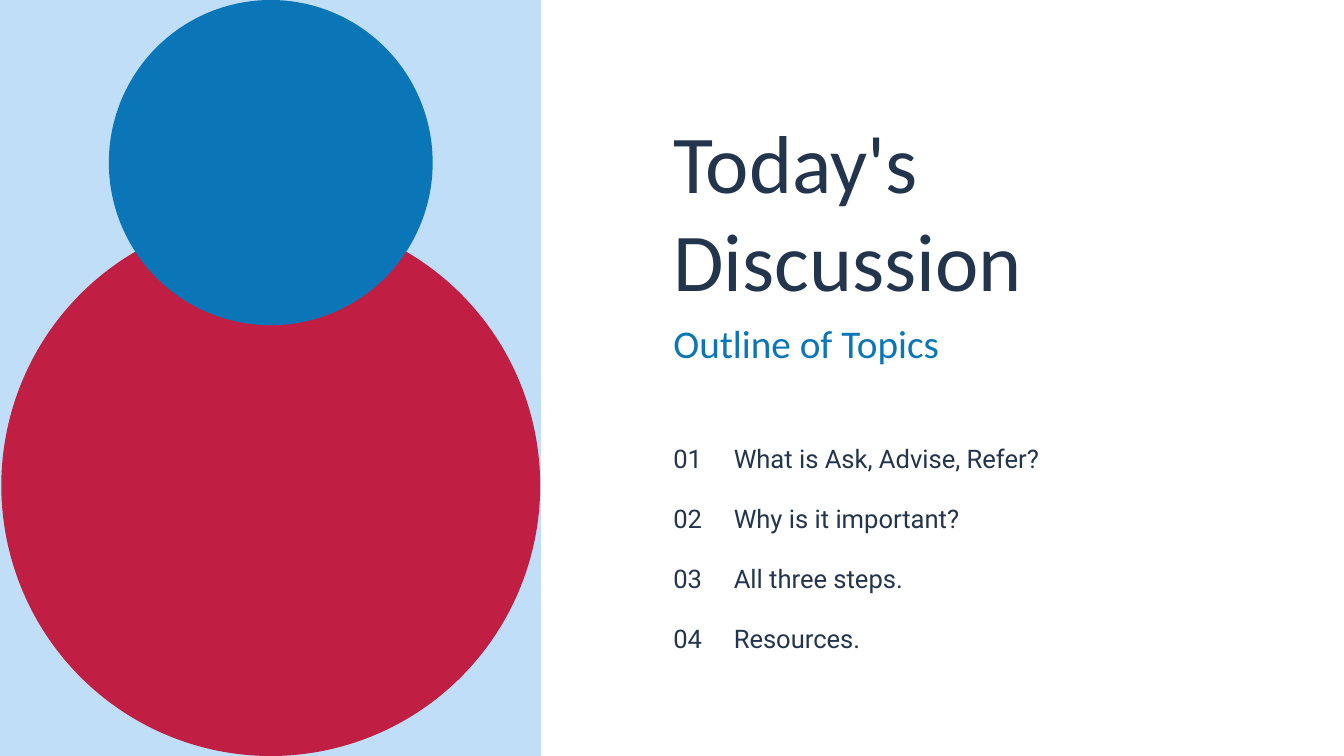
from pptx import Presentation
from pptx import util as u
from pptx.dml.color import RGBColor
from pptx.enum import shapes, text

NAVY, BLUE, RED, PALE = "23344D", "0B76B7", "C11E43", "C0DEF8"
TEXT_LEFT, TEXT_WIDTH = 721.4, 638
TOPICS = [
    "What is Ask, Advise, Refer?",
    "Why is it important?",
    "All three steps.",
    "Resources.",
]


def color(hex_value):
    return RGBColor.from_string(hex_value)


def place(shape, left, top, width, height):
    shape.left, shape.top = u.Pt(left), u.Pt(top)
    shape.width, shape.height = u.Pt(width), u.Pt(height)


def add_solid(slide, kind, box, fill):
    """Add a plain filled shape without outline."""
    solid = slide.shapes.add_shape(kind, *map(u.Pt, box))
    solid.shadow.inherit = False
    solid.fill.solid()
    solid.fill.fore_color.rgb = color(fill)
    solid.line.fill.background()


def write(shape, words, size, spacing, font="Calibri", hex_value=NAVY):
    """Fill a text shape with one left-aligned paragraph."""
    frame = shape.text_frame
    frame.margin_left = frame.margin_right = 0
    frame.margin_top = frame.margin_bottom = 0
    frame.word_wrap = True
    frame.auto_size = text.MSO_AUTO_SIZE.NONE
    frame.vertical_anchor = text.MSO_ANCHOR.TOP
    frame.text = words
    paragraph = frame.paragraphs[0]
    paragraph.alignment = text.PP_ALIGN.LEFT
    paragraph.line_spacing = u.Pt(spacing)
    paragraph.font.name = font
    paragraph.font.size = u.Pt(size)
    paragraph.font.color.rgb = color(hex_value)


def add_label(slide, box, words, *style):
    label = slide.shapes.add_textbox(*map(u.Pt, box))
    write(label, words, *style)


def add_topic(slide, number, topic):
    """Add one numbered row of the outline."""
    top = 455.8 + (number - 1) * 64.3
    style = (27.4, 51.8, "Roboto")
    add_label(slide, (TEXT_LEFT, top, 56, 43), f"{number:02}", *style)
    add_label(slide, (786.2, top, 543.6, 43), topic, *style)


def main():
    deck = Presentation()
    deck.slide_width, deck.slide_height = u.Pt(1440), u.Pt(810)
    slide = deck.slides.add_slide(deck.slide_layouts[5])

    # Left panel with the two stacked circles
    kinds = shapes.MSO_SHAPE
    add_solid(slide, kinds.RECTANGLE, (0, 0, 579.6, 810), PALE)
    add_solid(slide, kinds.OVAL, (1.4, 230.4, 577.4, 579.6), RED)
    add_solid(slide, kinds.OVAL, (116.6, 0, 347, 348.5), BLUE)

    # Heading
    title = slide.shapes.title
    place(title, TEXT_LEFT, 118.8, TEXT_WIDTH, 208.8)
    write(title, "Today's Discussion", 88, 105.6)
    add_label(slide, (TEXT_LEFT, 341.3, TEXT_WIDTH, 50.4),
              "Outline of Topics", 42, 51.7, "Calibri", BLUE)

    # Numbered topics
    for number, topic in enumerate(TOPICS, 1):
        add_topic(slide, number, topic)

    deck.save("out.pptx")


if __name__ == "__main__":
    main()
